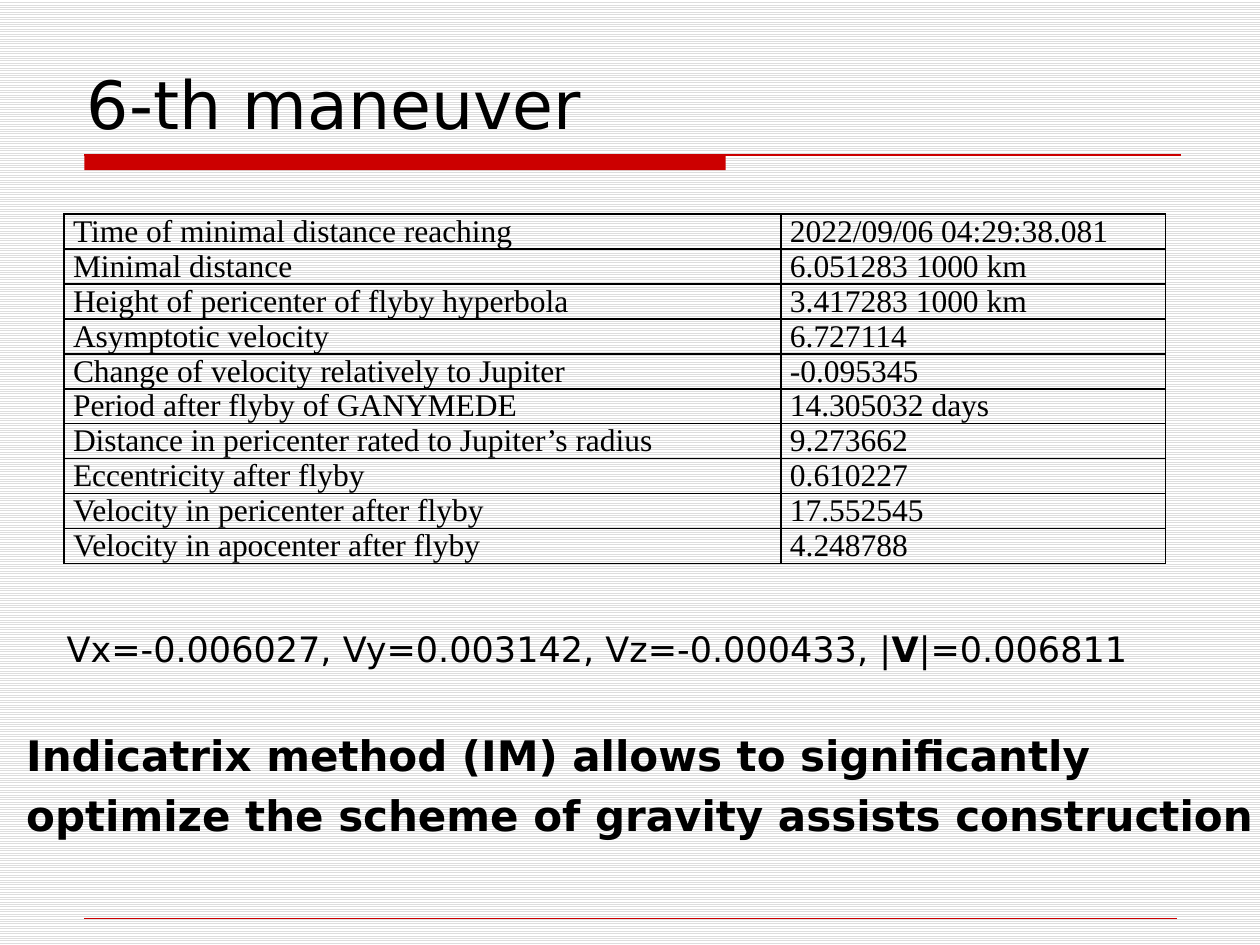
from lxml import etree
from pptx import Presentation
from pptx.dml.color import RGBColor
from pptx.enum.dml import MSO_PATTERN
from pptx.enum.shapes import MSO_CONNECTOR, MSO_SHAPE
from pptx.enum.text import MSO_ANCHOR, MSO_AUTO_SIZE, PP_ALIGN
from pptx.oxml.ns import qn
from pptx.util import Inches, Pt

STRAIGHT = MSO_CONNECTOR.STRAIGHT
RECTANGLE = MSO_SHAPE.RECTANGLE
LIGHT_HORIZONTAL = MSO_PATTERN.LIGHT_HORIZONTAL
TOP, BOTTOM = MSO_ANCHOR.TOP, MSO_ANCHOR.BOTTOM
NO_AUTOFIT, GROW = MSO_AUTO_SIZE.NONE, MSO_AUTO_SIZE.SHAPE_TO_FIT_TEXT
LEFT = PP_ALIGN.LEFT

# Content
TITLE = "6-th maneuver"
FLYBY_ROWS = [
    ("Time of minimal distance reaching", "2022/09/06 04:29:38.081"),
    ("Minimal distance", "6.051283 1000 km"),
    ("Height of pericenter of flyby hyperbola", "3.417283 1000 km"),
    ("Asymptotic velocity", "6.727114"),
    ("Change of velocity relatively to Jupiter", "-0.095345"),
    ("Period after flyby of GANYMEDE", "14.305032 days"),
    ("Distance in pericenter rated to Jupiter’s radius", "9.273662"),
    ("Eccentricity after flyby", "0.610227"),
    ("Velocity in pericenter after flyby", "17.552545"),
    ("Velocity in apocenter after flyby", "4.248788"),
]
# Paragraphs of (text, bold) runs
VELOCITY = [[("Vx=-0.006027, Vy=0.003142, Vz=-0.000433, |", False),
             ("V", True), ("|=0.006811", False)]]
CONCLUSION = [[("Indicatrix method (IM) allows to significantly", True)],
              [("optimize the scheme of gravity assists construction", True)]]

THEME = {
    "text": RGBColor(0x00, 0x00, 0x00),
    "accent": RGBColor(0xCC, 0x00, 0x00),
    "stripe": RGBColor(0xDD, 0xDD, 0xDD),
    "paper": RGBColor(0xFF, 0xFF, 0xFF),
    "title": {"name": "DejaVu Sans", "size": Pt(38)},
    "table": {"name": "Times New Roman", "size": Pt(18)},
    "velocity": {"name": "DejaVu Sans", "size": Pt(20)},
    "conclusion": {"name": "DejaVu Sans", "size": Pt(24)},
}

# Layout in inches
TITLE_BOX = (0.59, 0.44, 8.75, 0.74)
TITLE_BAR = (0.67, 1.23, 5.09, 0.12)
RULES = [(0.67, 9.37, 1.23, 0.75), (0.67, 9.34, 7.29, 0.25)]
TABLE_LEFT, TABLE_TOP, ROW_HEIGHT = 0.51, 1.7, 0.27
COLUMN_WIDTHS = (5.69, 3.05)
VELOCITY_BOX = (0.43, 4.93, 9.29, 0.43)
CONCLUSION_BOX = (0.11, 5.74, 9.95, 0.99)


def apply(target, values):
    for name, value in values.items():
        setattr(target, name, value)


def add_run(paragraph, text, style, bold=False):
    run = paragraph.add_run()
    run.text = text
    apply(run.font, {**THEME[style], "bold": bold})
    run.font.color.rgb = THEME["text"]


def add_rule(slide, left, right, y, width):
    rule = slide.shapes.add_connector(
        STRAIGHT, Inches(left), Inches(y), Inches(right), Inches(y))
    rule.line.color.rgb = THEME["accent"]
    rule.line.width = Pt(width)
    etree.SubElement(rule._element.spPr, qn("a:effectLst"))


def add_text(slide, box, paragraphs, style, wrap, space_before=0):
    frame = slide.shapes.add_textbox(*map(Inches, box)).text_frame
    apply(frame, {"word_wrap": wrap, "auto_size": GROW})
    for index, runs in enumerate(paragraphs):
        paragraph = frame.add_paragraph() if index else frame.paragraphs[0]
        apply(paragraph, {"alignment": LEFT, "space_before": Pt(space_before)})
        for text, bold in runs:
            add_run(paragraph, text, style, bold)


def set_borders(cell, color, width):
    properties = cell._tc.get_or_add_tcPr()
    for index, side in enumerate(("lnL", "lnR", "lnT", "lnB")):
        line = etree.Element(qn(f"a:{side}"), w=str(width))
        fill = etree.SubElement(line, qn("a:solidFill"))
        etree.SubElement(fill, qn("a:srgbClr"), val=str(color))
        properties.insert(index, line)


def add_flyby_table(slide):
    table = slide.shapes.add_table(
        len(FLYBY_ROWS), len(COLUMN_WIDTHS), Inches(TABLE_LEFT), Inches(TABLE_TOP),
        Inches(sum(COLUMN_WIDTHS)), Inches(ROW_HEIGHT * len(FLYBY_ROWS))).table
    apply(table, {"first_row": False, "horz_banding": False})
    for column, width in zip(table.columns, COLUMN_WIDTHS):
        column.width = Inches(width)
    for row, values in zip(table.rows, FLYBY_ROWS):
        row.height = Inches(ROW_HEIGHT)
        for cell, text in zip(row.cells, values):
            apply(cell, {"margin_left": Inches(0.07), "margin_right": Inches(0.07),
                         "margin_top": 0, "margin_bottom": 0,
                         "vertical_anchor": TOP})
            cell.fill.background()
            set_borders(cell, THEME["text"], Pt(1))
            add_run(cell.text_frame.paragraphs[0], text, "table")


def main():
    presentation = Presentation()
    apply(presentation, {"slide_width": Inches(10), "slide_height": Inches(7.5)})
    slide = presentation.slides.add_slide(presentation.slide_layouts[5])

    # Striped background
    background = slide.background.fill
    background.patterned()
    background.pattern = LIGHT_HORIZONTAL
    background.fore_color.rgb = THEME["stripe"]
    background.back_color.rgb = THEME["paper"]

    # Title bar and rules
    bar = slide.shapes.add_shape(RECTANGLE, *map(Inches, TITLE_BAR))
    bar.shadow.inherit = False
    bar.fill.solid()
    bar.fill.fore_color.rgb = THEME["accent"]
    bar.line.fill.background()
    for rule in RULES:
        add_rule(slide, *rule)

    # Title
    title = slide.shapes.title
    apply(title, dict(zip(("left", "top", "width", "height"), map(Inches, TITLE_BOX))))
    apply(title.text_frame, {"vertical_anchor": BOTTOM, "auto_size": NO_AUTOFIT,
                             "word_wrap": True})
    heading = title.text_frame.paragraphs[0]
    heading.alignment = LEFT
    add_run(heading, TITLE, "title")

    # Flyby data, velocity components and conclusion
    add_flyby_table(slide)
    add_text(slide, VELOCITY_BOX, VELOCITY, "velocity", wrap=True)
    add_text(slide, CONCLUSION_BOX, CONCLUSION, "conclusion", wrap=False,
             space_before=5.6)

    presentation.save("out.pptx")


if __name__ == "__main__":
    main()
